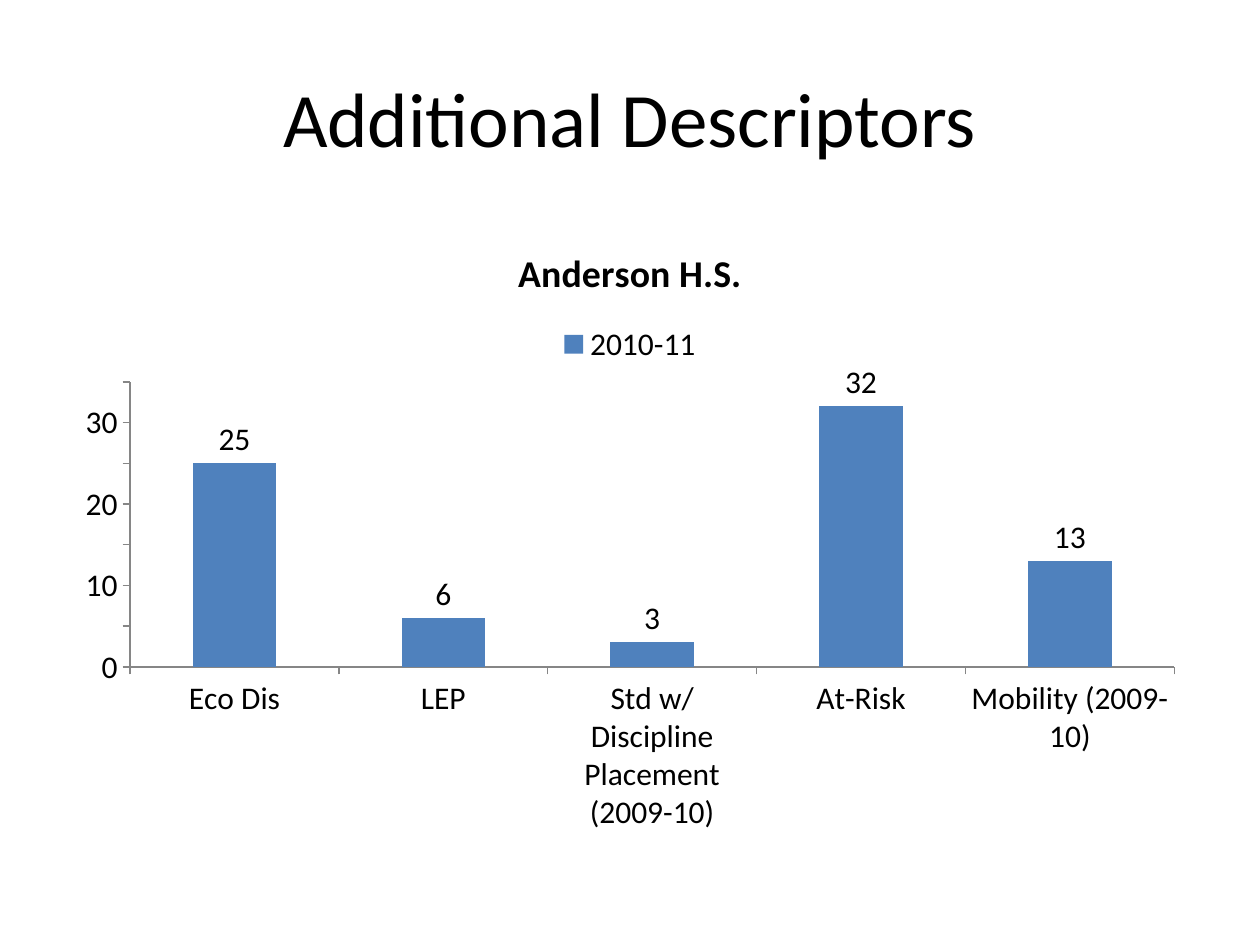
from pptx import Presentation
from pptx.chart.data import CategoryChartData
from pptx.dml.color import RGBColor
from pptx.enum.chart import XL_CHART_TYPE, XL_LABEL_POSITION, XL_LEGEND_POSITION, XL_TICK_MARK
from pptx.enum.text import MSO_ANCHOR, PP_ALIGN
from pptx.util import Inches, Pt

FONT = "Calibri"
BLACK = "000000"
BLUE = "4F81BD"
GRAY = "868686"
DESCRIPTORS = {
    "Eco Dis": 25,
    "LEP": 6,
    "Std w/Discipline Placement (2009-10)": 3,
    "At-Risk": 32,
    "Mobility (2009-10)": 13,
}


def rgb(hex_color):
    """Turn a hex string into a colour."""
    return RGBColor.from_string(hex_color)


def style_font(font, size, bold=False, color=BLACK):
    """Set the face, size, weight and colour of a font."""
    font.name = FONT
    font.size = Pt(size)
    font.bold = bold
    font.color.rgb = rgb(color)


def write_text(frame, text, size, bold=False, color=BLACK, align=PP_ALIGN.CENTER):
    """Fill a text frame with one formatted paragraph."""
    paragraph = frame.paragraphs[0]
    paragraph.alignment = align
    run = paragraph.add_run()
    run.text = text
    style_font(run.font, size, bold, color)


def place_title(slide, text, left, top, width, height):
    """Move the title placeholder into its box and write it."""
    title = slide.shapes.title
    title.left, title.top, title.width, title.height = left, top, width, height
    title.text_frame.vertical_anchor = MSO_ANCHOR.MIDDLE
    write_text(title.text_frame, text, size=44)


def style_axis(axis):
    """Give an axis a thin gray line and outward ticks."""
    axis.has_major_gridlines = False
    axis.major_tick_mark = XL_TICK_MARK.OUTSIDE
    axis.minor_tick_mark = XL_TICK_MARK.NONE
    axis.format.line.color.rgb = rgb(GRAY)
    axis.format.line.width = Pt(0.75)
    style_font(axis.tick_labels.font, 18)


def place_descriptor_chart(slide, left, top, width, height):
    """Draw the column chart of school descriptors in its box."""
    data = CategoryChartData(number_format="#,##0")
    data.categories = list(DESCRIPTORS)
    data.add_series("2010-11", list(DESCRIPTORS.values()))
    chart = slide.shapes.add_chart(
        XL_CHART_TYPE.COLUMN_CLUSTERED, left, top, width, height, data
    ).chart
    style_font(chart.font, 18)

    chart.has_title = True
    write_text(chart.chart_title.text_frame, "Anderson H.S.", size=21.6, bold=True)
    chart.chart_title.include_in_layout = False

    chart.has_legend = True
    chart.legend.position = XL_LEGEND_POSITION.TOP
    chart.legend.include_in_layout = False
    style_font(chart.legend.font, 18)

    for axis in (chart.category_axis, chart.value_axis):
        style_axis(axis)
    chart.value_axis.minimum_scale = 0
    chart.value_axis.maximum_scale = 35
    chart.value_axis.major_unit = 5

    plot = chart.plots[0]
    plot.gap_width = 150
    plot.overlap = -25
    plot.vary_by_categories = False
    year = plot.series[0]
    year.format.fill.solid()
    year.format.fill.fore_color.rgb = rgb(BLUE)
    labels = year.data_labels
    labels.show_value = True
    labels.number_format = "#,##0"
    labels.number_format_is_linked = False
    labels.position = XL_LABEL_POSITION.OUTSIDE_END
    style_font(labels.font, 18)


def main():
    """Build the slide and save it."""
    presentation = Presentation()
    presentation.slide_width = Inches(10)
    presentation.slide_height = Inches(7.5)
    slide = presentation.slides.add_slide(presentation.slide_layouts.get_by_name("Title Only"))
    left, width = Inches(0.5), Inches(9)
    place_title(slide, "Additional Descriptors", left, Inches(0.3), width, Inches(1.25))
    place_descriptor_chart(slide, left, Inches(1.75), width, Inches(4.95))
    presentation.save("out.pptx")


if __name__ == "__main__":
    main()
